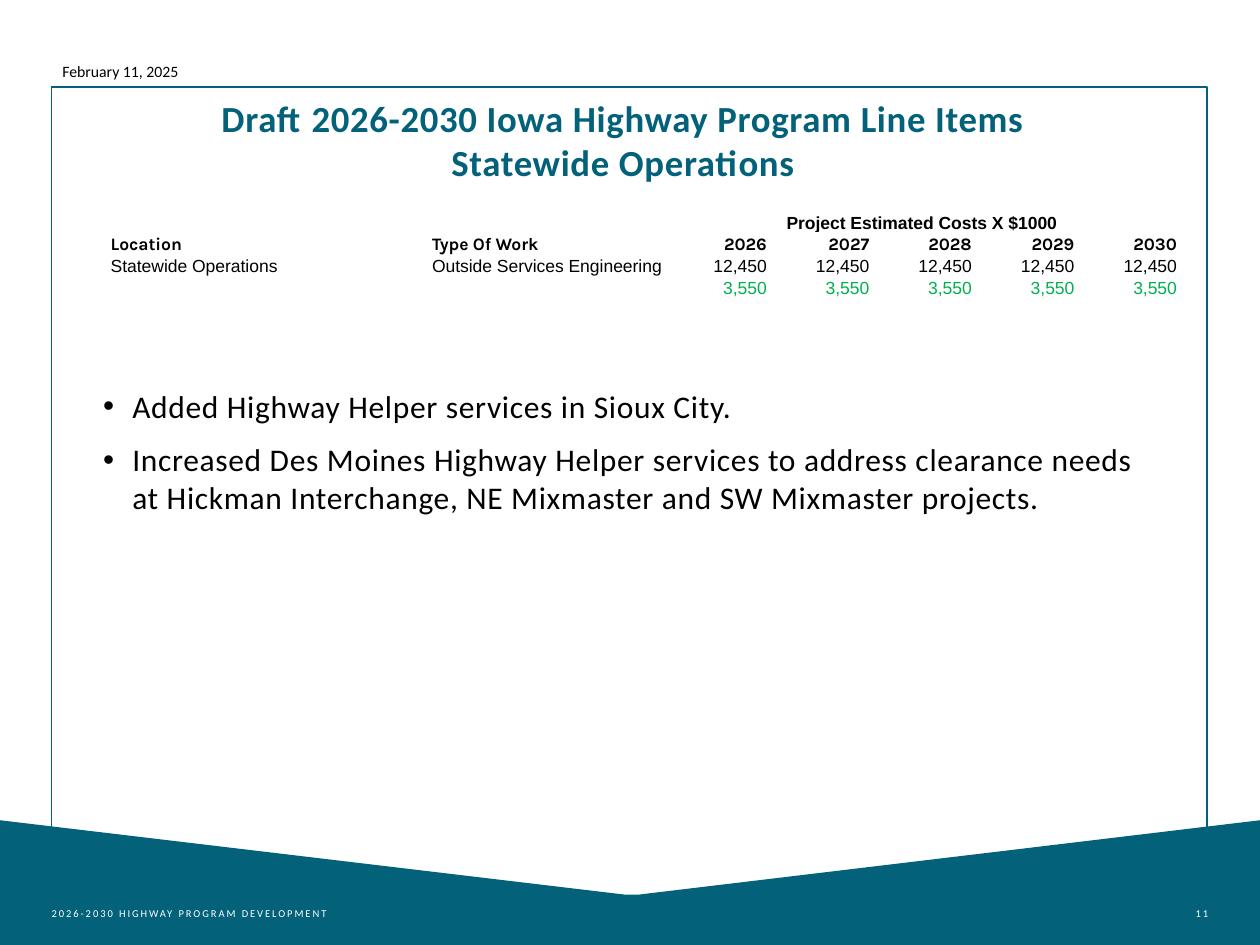
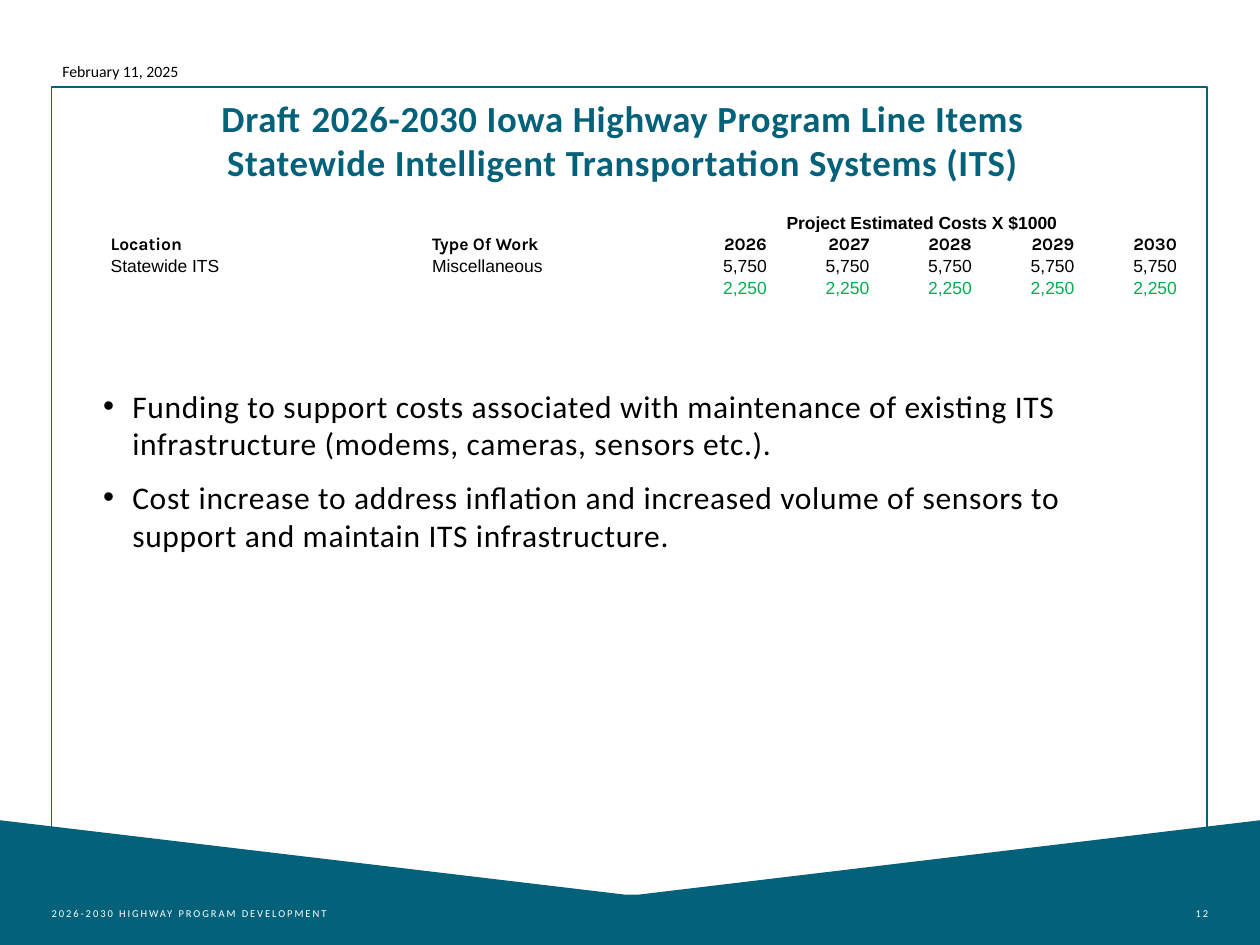
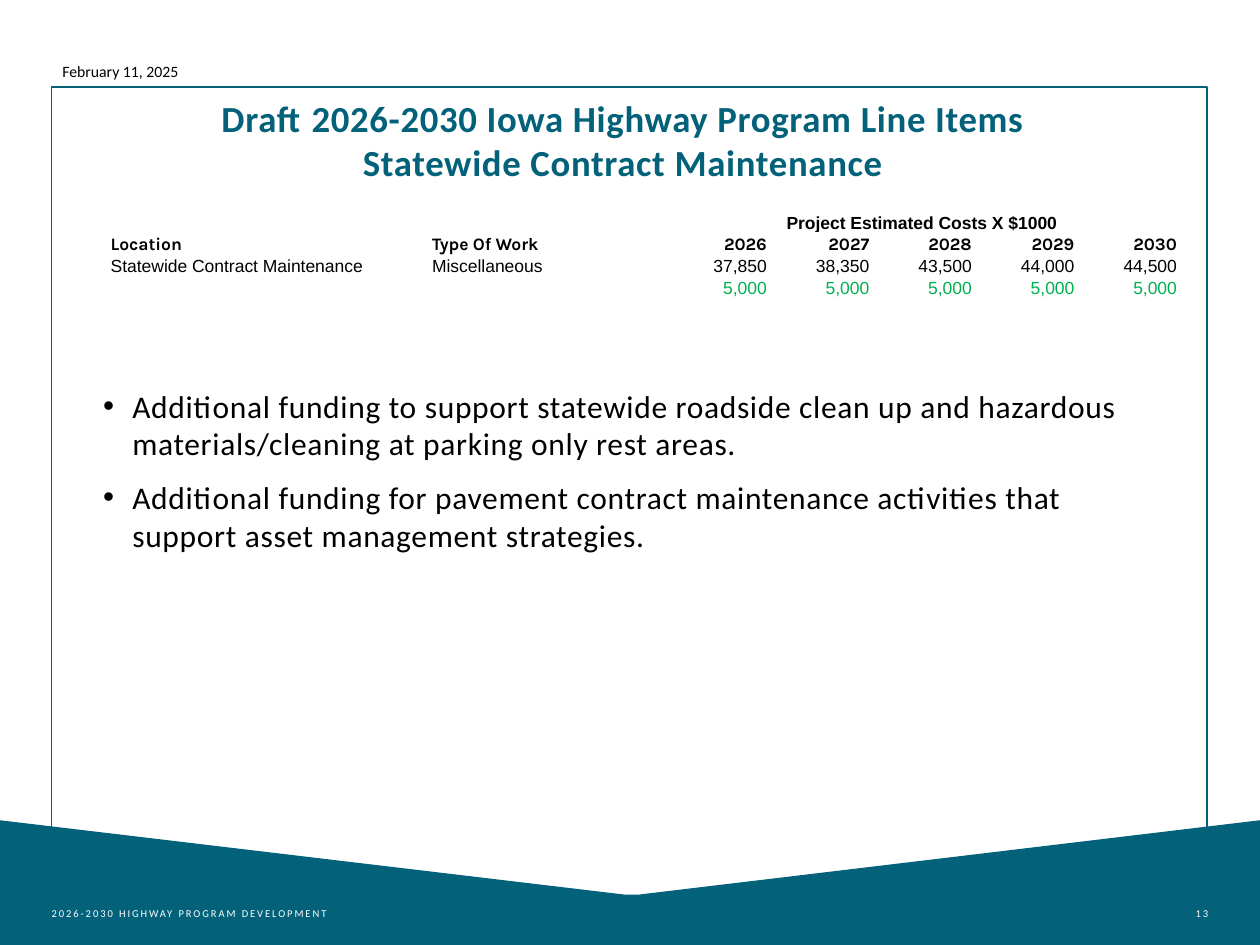
from dataclasses import dataclass
from typing import Optional

from lxml import etree
from pptx import Presentation
from pptx import util as u
from pptx.dml import color
from pptx.enum import shapes, text
from pptx.oxml import ns

Pt = u.Pt
ALIGN = text.PP_ALIGN
ANCHOR = text.MSO_ANCHOR
FIT = text.MSO_AUTO_SIZE


@dataclass(frozen=True)
class TextStyle:
    font: str
    size: float
    colour: str
    bold: bool = False
    tracking: float = 0


@dataclass(frozen=True)
class Theme:
    teal: str = "03617A"
    white: str = "FFFFFF"
    title: TextStyle = TextStyle("Calibri", 21, "03617A", True, 0.4)
    body: TextStyle = TextStyle("Calibri", 18, "000000", tracking=0.4)
    date: TextStyle = TextStyle("Calibri", 9, "000000")
    footer: TextStyle = TextStyle("Calibri", 6, "FFFFFF", tracking=1.1)
    costs_heading: TextStyle = TextStyle("Arial", 10, "000000", True)
    column_heading: TextStyle = TextStyle("Karla", 10, "000000", True)
    cost: TextStyle = TextStyle("Arial", 10, "000000")
    added_cost: TextStyle = TextStyle("Arial", 10, "00B050")


@dataclass(frozen=True)
class Box:
    left: float
    top: float
    width: float
    height: float

    def lengths(self) -> tuple:
        return Pt(self.left), Pt(self.top), Pt(self.width), Pt(self.height)


@dataclass(frozen=True)
class Label:
    box: Box
    style: TextStyle
    align: ALIGN = ALIGN.LEFT
    anchor: ANCHOR = ANCHOR.TOP
    insets: tuple = (0, 3.6, 7.2, 3.6)
    wrap: bool = True


@dataclass(frozen=True)
class LineItem:
    number: int
    program: str
    location: str
    work: str
    costs: list
    added_costs: list
    reasons: list


THEME = Theme()
WIDTH, HEIGHT = 720, 540
FRAME = Box(29.5, 49.7, 660.3, 479.5)
WEDGE = [(720, 468.7), (720, 540), (0, 540), (0, 468.7), (357, 511.2), (365, 511.2)]

TITLE = Label(Box(59, 51.1, 601.2, 59.8), THEME.title, ALIGN.CENTER)
REASONS = Label(Box(59, 217.4, 601.2, 221.8), THEME.body)
DATE = Label(Box(24.5, 31.7, 88.6, 18), THEME.date, ALIGN.CENTER,
             insets=(7.2, 3.6, 7.2, 3.6), wrap=False)
FOOTER = Label(Box(29.5, 500.4, 192.2, 28.8), THEME.footer,
               anchor=ANCHOR.BOTTOM, insets=(0, 3.6, 0, 3.6))
PAGE_NUMBER = Label(Box(620.6, 500.4, 69.8, 28.8), THEME.footer, ALIGN.RIGHT,
                    ANCHOR.BOTTOM, (0, 3.6, 0, 3.6))

YEARS = [str(year) for year in range(2026, 2031)]
COSTS_BOX = Box(62.6, 119.5, 611, 51.5)
COLUMN_WIDTHS = [183.6, 134] + [58.6] * len(YEARS)
ROW_HEIGHTS = [13.7, 12.4, 12.4, 12.4]
FIRST_YEAR = 2
HANGING_INDENT = 16.6

ITEMS = [
    LineItem(
        11, "Statewide Operations", "Statewide Operations", "Outside Services Engineering",
        ["12,450"] * 5, ["3,550"] * 5,
        ["Added Highway Helper services in Sioux City.",
         "Increased Des Moines Highway Helper services to address clearance needs "
         "at Hickman Interchange, NE Mixmaster and SW Mixmaster projects."]),
    LineItem(
        12, "Statewide Intelligent Transportation Systems (ITS)", "Statewide ITS", "Miscellaneous",
        ["5,750"] * 5, ["2,250"] * 5,
        ["Funding to support costs associated with maintenance of existing ITS "
         "infrastructure (modems, cameras, sensors etc.).",
         "Cost increase to address inflation and increased volume of sensors to "
         "support and maintain ITS infrastructure."]),
    LineItem(
        13, "Statewide Contract Maintenance", "Statewide Contract Maintenance", "Miscellaneous",
        ["37,850", "38,350", "43,500", "44,000", "44,500"], ["5,000"] * 5,
        ["Additional funding to support statewide roadside clean up and hazardous "
         "materials/cleaning at parking only rest areas.",
         "Additional funding for pavement contract maintenance activities that "
         "support asset management strategies."]),
]


def rgb(value: str) -> color.RGBColor:
    return color.RGBColor.from_string(value)


def style_paragraph(paragraph, style: TextStyle, align: ALIGN) -> None:
    paragraph.alignment = align
    for run in paragraph.runs:
        run.font.name = style.font
        run.font.size = Pt(style.size)
        run.font.bold = style.bold
        run.font.color.rgb = rgb(style.colour)
        if style.tracking:
            run.font._element.set("spc", str(round(style.tracking * 100)))


def write_label(shape, label: Label, content: str):
    shape.left, shape.top, shape.width, shape.height = label.box.lengths()
    frame = shape.text_frame
    frame.word_wrap = label.wrap
    frame.auto_size = FIT.NONE if label.wrap else FIT.SHAPE_TO_FIT_TEXT
    frame.vertical_anchor = label.anchor
    (frame.margin_left, frame.margin_top,
     frame.margin_right, frame.margin_bottom) = map(Pt, label.insets)
    frame.text = content
    for paragraph in frame.paragraphs:
        style_paragraph(paragraph, label.style, label.align)
    return frame


def add_label(slide, label: Label, content: str):
    return write_label(slide.shapes.add_textbox(*label.box.lengths()), label, content)


def add_backdrop(slide) -> None:
    corners = [(Pt(x), Pt(y)) for x, y in WEDGE]
    builder = slide.shapes.build_freeform(*corners[0])
    builder.add_line_segments(corners[1:], close=True)
    wedge = builder.convert_to_shape()
    wedge.shadow.inherit = False
    wedge.fill.solid()
    wedge.fill.fore_color.rgb = rgb(THEME.teal)
    wedge.line.fill.background()

    border = slide.shapes.add_shape(shapes.MSO_SHAPE.RECTANGLE, *FRAME.lengths())
    border.shadow.inherit = False
    border.fill.background()
    border.line.color.rgb = rgb(THEME.teal)
    border.line.width = Pt(1)


def add_reasons(slide, reasons: list) -> None:
    frame = add_label(slide, REASONS, "\n".join(reasons))
    for index, paragraph in enumerate(frame.paragraphs):
        properties = paragraph._p.get_or_add_pPr()
        properties.set("marL", str(Pt(HANGING_INDENT)))
        properties.set("indent", str(-Pt(HANGING_INDENT)))
        etree.SubElement(properties, ns.qn("a:buFont"), typeface="Arial")
        etree.SubElement(properties, ns.qn("a:buChar"), char="•")
        if index:
            paragraph.space_before = Pt(9)


def write_cell(cell, content: str, style: TextStyle, align: ALIGN,
               fill: Optional[str]) -> None:
    cell.margin_left = cell.margin_top = cell.margin_right = Pt(0.7)
    cell.margin_bottom = Pt(0)
    if fill:
        cell.fill.solid()
        cell.fill.fore_color.rgb = rgb(fill)
    else:
        cell.fill.background()
    paragraph = cell.text_frame.paragraphs[0]
    if content:
        paragraph.text = content
        style_paragraph(paragraph, style, align)
    else:
        etree.SubElement(paragraph._p, ns.qn("a:endParaRPr"), sz=str(style.size * 100))


def add_costs(slide, item: LineItem) -> None:
    rows = [
        (["", "", "Project Estimated Costs X $1000", "", "", "", ""], THEME.costs_heading, None),
        (["Location", "Type Of Work", *YEARS], THEME.column_heading, THEME.white),
        ([item.location, item.work, *item.costs], THEME.cost, None),
        (["", "", *item.added_costs], THEME.added_cost, None),
    ]
    table = slide.shapes.add_table(len(rows), len(COLUMN_WIDTHS), *COSTS_BOX.lengths()).table
    table.first_row = table.horz_banding = False
    for column, width in zip(table.columns, COLUMN_WIDTHS):
        column.width = Pt(width)
    for row, height in zip(table.rows, ROW_HEIGHTS):
        row.height = Pt(height)
    for row, (contents, style, fill) in zip(table.rows, rows):
        for index, (cell, content) in enumerate(zip(row.cells, contents)):
            align = ALIGN.RIGHT if index >= FIRST_YEAR else ALIGN.LEFT
            write_cell(cell, content, style, align, fill)
    heading = table.cell(0, FIRST_YEAR)
    heading.merge(table.cell(0, len(COLUMN_WIDTHS) - 1))
    heading.vertical_anchor = ANCHOR.BOTTOM
    heading.text_frame.paragraphs[0].alignment = ALIGN.CENTER


def add_item_slide(deck, item: LineItem) -> None:
    slide = deck.slides.add_slide(deck.slide_layouts[5])
    add_backdrop(slide)
    add_label(slide, FOOTER, "2026-2030 HIGHWAY PROGRAM DEVELOPMENT")
    add_label(slide, PAGE_NUMBER, str(item.number))
    add_label(slide, DATE, "February 11, 2025")
    write_label(slide.shapes.title, TITLE,
                f"Draft 2026-2030 Iowa Highway Program Line Items\n{item.program}")
    add_reasons(slide, item.reasons)
    add_costs(slide, item)


def main() -> None:
    deck = Presentation()
    deck.slide_width, deck.slide_height = Pt(WIDTH), Pt(HEIGHT)
    for item in ITEMS:
        add_item_slide(deck, item)
    deck.save("out.pptx")


if __name__ == "__main__":
    main()
